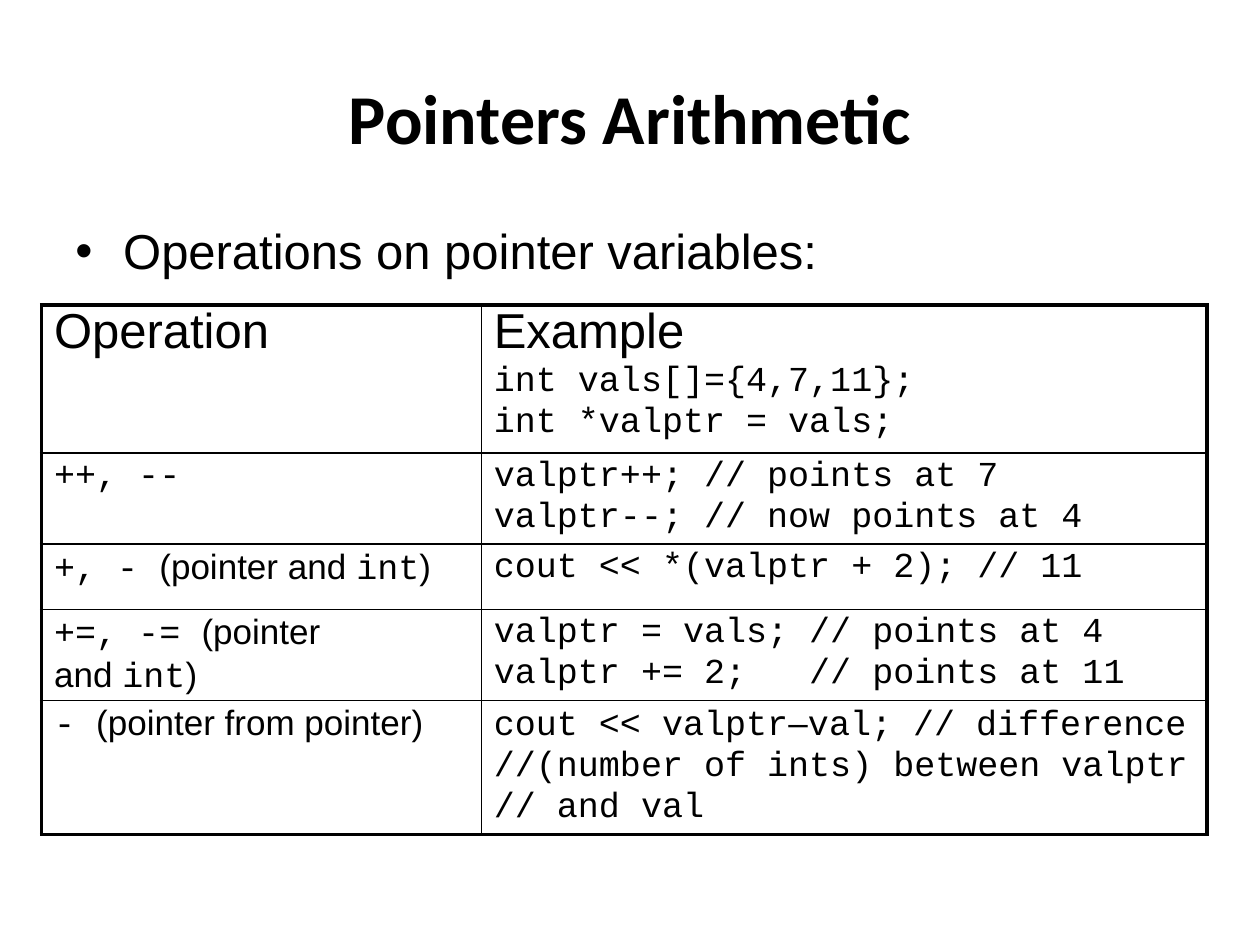
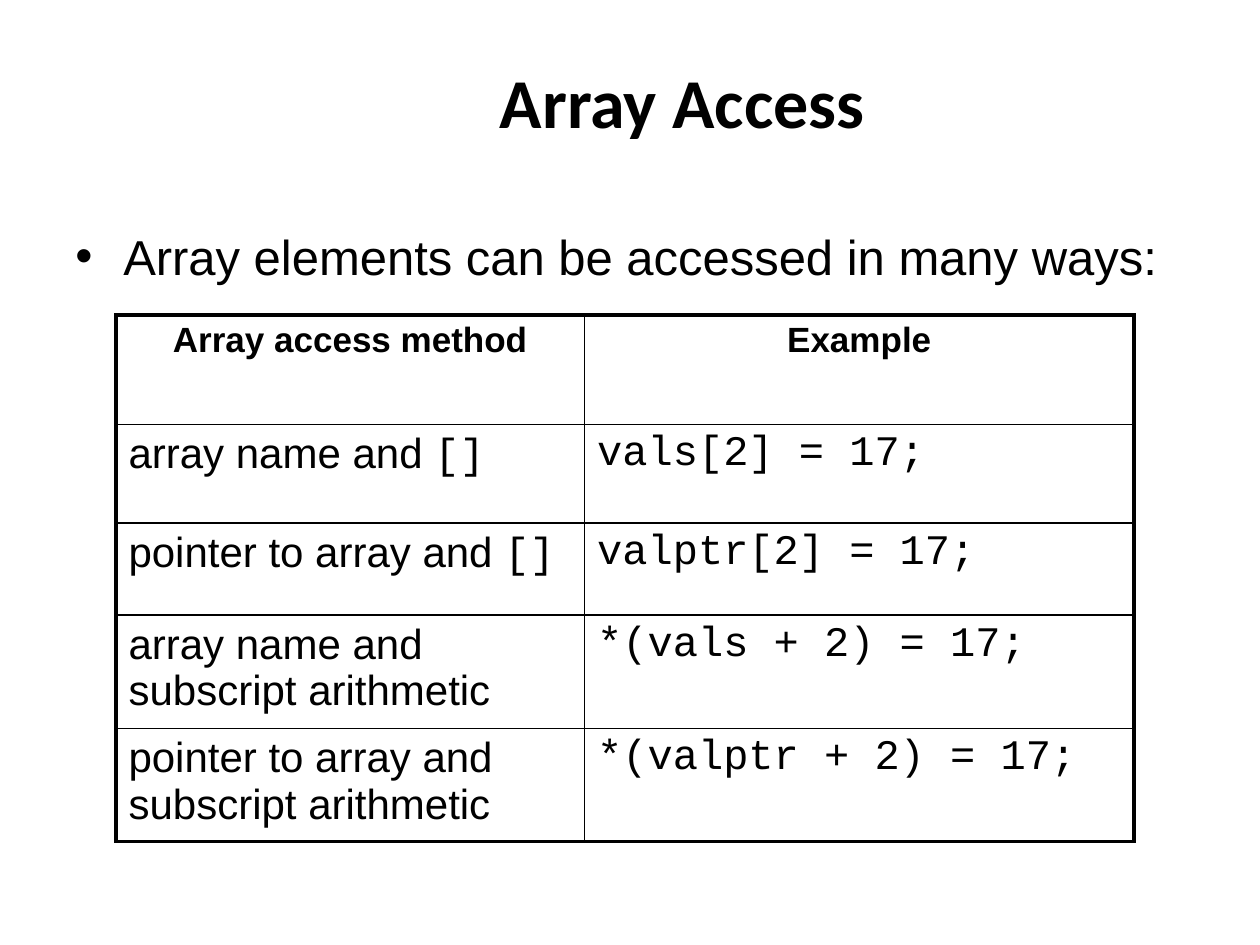
"""Builds two slides on pointer arithmetic and array access in C++."""
from lxml.etree import SubElement
from pptx import Presentation
from pptx.dml.color import RGBColor
from pptx.enum.text import MSO_ANCHOR, PP_ALIGN
from pptx.oxml.ns import qn
from pptx.util import Inches, Pt

BLACK = "000000"
OUTER_LINE, INNER_LINE = 2.25, 1

SLIDES = [
    {
        "title": "Pointers Arithmetic",
        "title_place": (0.5, 0.3, 9, 1.25),
        "bullet": "Operations on pointer variables:",
        "bullet_place": (0.5, 1.75, 8.17, 0.49),
        "bullet_spacing": 0.9,
        "table_place": (0.33, 2.42, 9.25, 3.91),
        "columns": [3.49, 5.76],
        "row_heights": [1.09, 0.66, 0.52, 0.66, 0.98],
        "header_size": 28,
        "header_bold": False,
        "header_align": PP_ALIGN.LEFT,
        "body_size": 20,
        "line_spacing": 0.85,
        "rows": [
            ["Operation", "Example\n`int vals[]={4,7,11};`\n`int *valptr = vals;`"],
            ["`++, --`", "`valptr++; // points at 7`\n`valptr--; // now points at 4`"],
            ["`+, - `(pointer and `int`)", "`cout << *(valptr + 2); // 11`"],
            ["`+=, -= `(pointer\nand `int`)",
             "`valptr = vals; // points at 4`\n`valptr += 2;   // points at 11`"],
            ["`- `(pointer from pointer)",
             "`cout << valptr`–`val; // difference`\n"
             "`//(number of ints) between valptr`\n`// and val`"],
        ],
    },
    {
        "title": "Array Access",
        "title_place": (1.33, 0.17, 8.17, 1.25),
        "bullet": "Array elements can be accessed in many ways:",
        "bullet_place": (0.5, 1.75, 8.92, 0.87),
        "bullet_spacing": 1.0,
        "table_place": (0.92, 2.5, 8.08, 4.18),
        "columns": [3.72, 4.36],
        "row_heights": [0.87, 0.78, 0.73, 0.9, 0.9],
        "header_size": 20,
        "header_bold": True,
        "header_align": PP_ALIGN.CENTER,
        "body_size": 24,
        "line_spacing": 1.0,
        "rows": [
            ["Array access method", "Example"],
            ["array name and `[]`", "`vals[2] = 17;`"],
            ["pointer to array and `[]`", "`valptr[2] = 17;`"],
            ["array name and subscript arithmetic", "`*(vals + 2) = 17;`"],
            ["pointer to array and subscript arithmetic", "`*(valptr + 2) = 17;`"],
        ],
    },
]


def style(font, name, size, bold=False, color=BLACK):
    """Set the face, size, weight and colour of a font."""
    font.name = name
    font.size = Pt(size)
    font.bold = bold
    font.color.rgb = RGBColor.from_string(color)


def add_border(cell, side, width):
    """Draw one solid side of a table cell."""
    line = SubElement(cell._tc.get_or_add_tcPr(), qn(f"a:ln{side}"), w=str(Pt(width)))
    SubElement(SubElement(line, qn("a:solidFill")), qn("a:srgbClr"), val=BLACK)


deck = Presentation()
deck.slide_width, deck.slide_height = Inches(10), Inches(7.5)

for content in SLIDES:
    page = deck.slides.add_slide(deck.slide_layouts[5])

    title = page.shapes.title
    title.left, title.top, title.width, title.height = map(Inches, content["title_place"])
    title.text_frame.text = content["title"]
    title.text_frame.vertical_anchor = MSO_ANCHOR.MIDDLE
    para = title.text_frame.paragraphs[0]
    para.alignment = PP_ALIGN.CENTER
    style(para.runs[0].font, "Calibri", 40, bold=True)

    box = page.shapes.add_textbox(*map(Inches, content["bullet_place"]))
    box.text_frame.word_wrap = True
    box.text_frame.text = content["bullet"]
    para = box.text_frame.paragraphs[0]
    para.line_spacing = content["bullet_spacing"]
    properties = para._p.get_or_add_pPr()
    properties.set("marL", str(Inches(0.38)))
    properties.set("indent", str(Inches(-0.38)))
    SubElement(properties, qn("a:buFont"), typeface="Arial")
    SubElement(properties, qn("a:buChar"), char="•")
    style(para.runs[0].font, "Arial", 28)

    rows = content["rows"]
    last_row, last_column = len(rows) - 1, len(content["columns"]) - 1
    table = page.shapes.add_table(
        len(rows), len(content["columns"]), *map(Inches, content["table_place"])).table
    table.first_row = table.horz_banding = False
    for column, width in zip(table.columns, content["columns"]):
        column.width = Inches(width)
    for row, height in zip(table.rows, content["row_heights"]):
        row.height = Inches(height)

    for row_index, texts in enumerate(rows):
        for column_index, text in enumerate(texts):
            cell = table.cell(row_index, column_index)
            edges = {"L": column_index == 0, "R": column_index == last_column,
                     "T": row_index == 0, "B": row_index == last_row}
            for side, is_outer in edges.items():
                add_border(cell, side, OUTER_LINE if is_outer else INNER_LINE)
            cell.fill.background()

            for line_index, line in enumerate(text.split("\n")):
                frame = cell.text_frame
                para = frame.add_paragraph() if line_index else frame.paragraphs[0]
                is_header = row_index == 0 and line_index == 0
                size = content["header_size"] if is_header else content["body_size"]
                para.line_spacing = content["line_spacing"]
                if line_index:
                    space = SubElement(para._p.get_or_add_pPr(), qn("a:spcBef"))
                    SubElement(space, qn("a:spcPct"), val="20000")
                if is_header:
                    para.alignment = content["header_align"]
                for part_index, part in enumerate(line.split("`")):
                    if part:
                        span = para.add_run()
                        span.text = part
                        face = "Courier New" if part_index % 2 else "Arial"
                        style(span.font, face, size, is_header and content["header_bold"])

deck.save("out.pptx")
